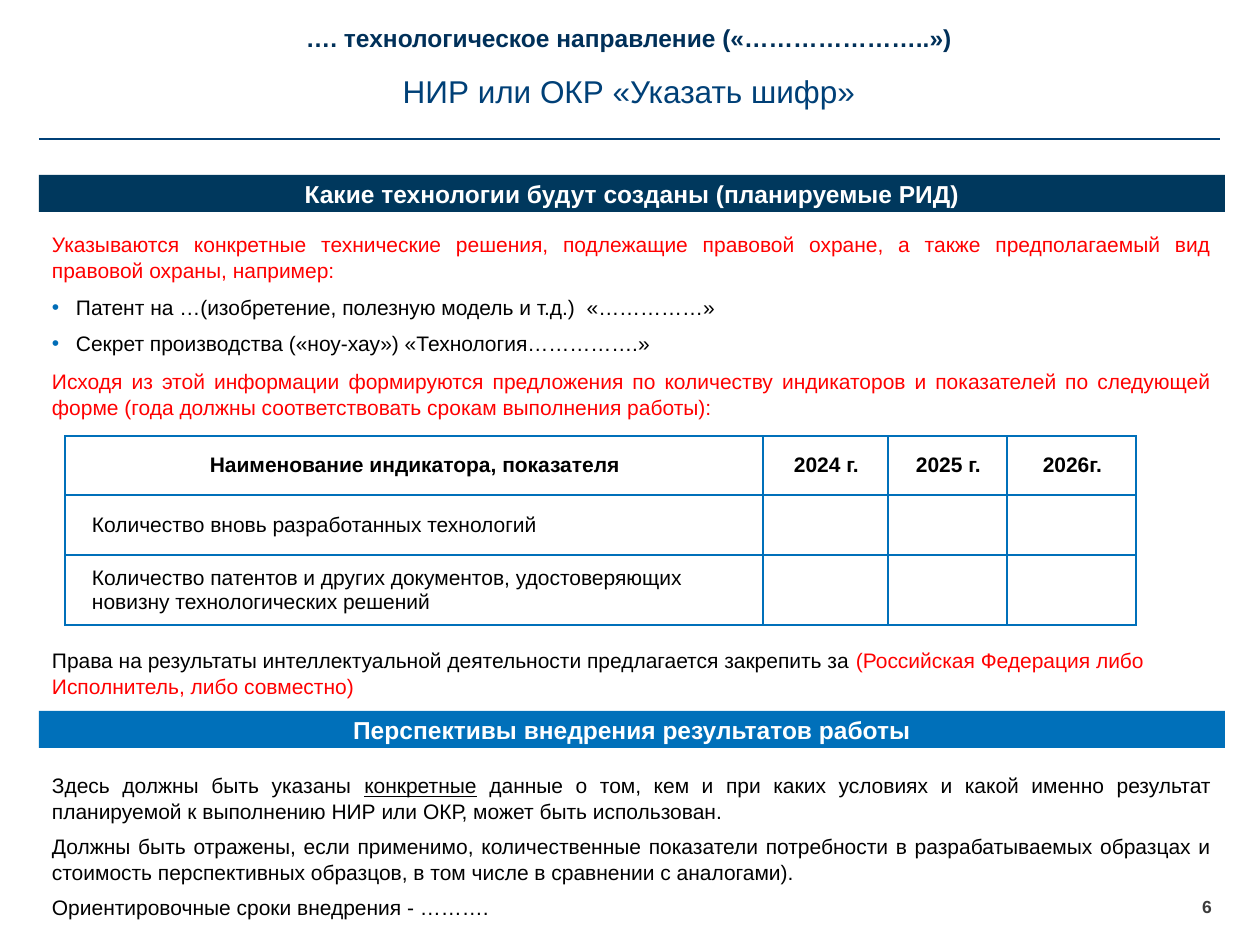
from lxml.etree import SubElement
from pptx import Presentation
from pptx.dml.color import RGBColor
from pptx.enum.shapes import MSO_CONNECTOR as Connector, MSO_SHAPE as Preset
from pptx.enum.text import MSO_ANCHOR as Anchor, PP_ALIGN as Align
from pptx.oxml.ns import qn
from pptx.util import Pt

EMU_PER_PX = 914400 / 126
LEFT, WIDTH = 39, 1186
INSET_X, INSET_Y = 13, 6
NAVY, BLUE, TITLE_BLUE = "00385D", "0070BA", "004077"
BLACK, RED, WHITE = "000000", "FF0000", "FFFFFF"
JUSTIFIED = {"alignment": Align.JUSTIFY}
CENTERED = {"alignment": Align.CENTER}


def px(length):
    return round(length * EMU_PER_PX)


def rgb(value):
    return RGBColor.from_string(value)


def apply(target, values):
    for name, value in values.items():
        setattr(target, name, value)


def add_run(paragraph, text, size=12, color=BLACK, **style):
    run = paragraph.add_run()
    run.text = text
    apply(run.font, {"name": "Arial", "size": Pt(size), **style})
    run.font.color.rgb = rgb(color)


def indent(paragraph, margin, first_line):
    properties = paragraph._p.get_or_add_pPr()
    properties.set("marL", str(px(margin)))
    properties.set("indent", str(px(first_line)))
    return properties


def add_bullet(paragraph, color):
    properties = indent(paragraph, 24, -24)
    bullet_color = SubElement(properties, qn("a:buClr"))
    SubElement(bullet_color, qn("a:srgbClr"), val=color)
    SubElement(properties, qn("a:buFont"), typeface="Arial")
    SubElement(properties, qn("a:buChar"), char="•")


def fill_frame(frame, paragraphs, layout, inset=(INSET_X, INSET_Y), anchor=Anchor.TOP, bullet=None):
    side, edge = map(px, inset)
    apply(frame, {"word_wrap": True, "vertical_anchor": anchor,
                  "margin_left": side, "margin_right": side,
                  "margin_top": edge, "margin_bottom": edge})
    for index, runs in enumerate(paragraphs):
        paragraph = frame.add_paragraph() if index else frame.paragraphs[0]
        if bullet:
            add_bullet(paragraph, bullet)
        apply(paragraph, layout)
        if not index:
            paragraph.space_before = Pt(0)
        for text, style in runs:
            add_run(paragraph, text, **style)


def add_text(slide, box, paragraphs, layout, **frame_options):
    block = slide.shapes.add_textbox(*map(px, box))
    fill_frame(block.text_frame, paragraphs, layout, **frame_options)


def add_banner(slide, top, title, color):
    banner = slide.shapes.add_shape(Preset.RECTANGLE, *map(px, (LEFT, top, WIDTH, 37)))
    banner.shadow.inherit = False
    banner.fill.solid()
    banner.fill.fore_color.rgb = rgb(color)
    banner.line.fill.background()
    heading = (title, {"size": 14, "color": WHITE, "bold": True})
    fill_frame(banner.text_frame, [[heading]], CENTERED, anchor=Anchor.MIDDLE)


def add_rule(slide, left, right, y):
    rule = slide.shapes.add_connector(Connector.STRAIGHT, *map(px, (left, y, right, y)))
    rule.line.color.rgb = rgb(TITLE_BLUE)
    rule.line.width = Pt(1)
    SubElement(rule._element.spPr, qn("a:effectLst"))


def add_borders(cell, color):
    properties = cell._tc.get_or_add_tcPr()
    for side in ("lnL", "lnR", "lnT", "lnB"):
        border = SubElement(properties, qn(f"a:{side}"), w=str(Pt(1)))
        SubElement(SubElement(border, qn("a:solidFill")), qn("a:srgbClr"), val=color)


def add_indicator_table(slide, left, top, widths, heights, rows):
    frame = slide.shapes.add_table(len(rows), len(widths),
                                   *map(px, (left, top, sum(widths), sum(heights))))
    table = frame.table
    apply(table, {"first_row": False, "horz_banding": False})
    for column, width in zip(table.columns, widths):
        column.width = px(width)
    for row_index, (row, height, texts) in enumerate(zip(table.rows, heights, rows)):
        row.height = px(height)
        header = row_index == 0
        for cell, text in zip(row.cells, texts):
            add_borders(cell, BLUE)
            cell.fill.background()
            apply(cell, {"vertical_anchor": Anchor.MIDDLE, "margin_left": px(2),
                         "margin_right": px(2), "margin_top": 0, "margin_bottom": 0})
            if text:
                paragraph = cell.text_frame.paragraphs[0]
                indent(paragraph, 2 if header else 25, 0)
                paragraph.alignment = Align.CENTER if header else Align.LEFT
                add_run(paragraph, text, bold=header)


def main():
    deck = Presentation()
    apply(deck, {"slide_width": px(1260), "slide_height": px(945)})
    slide = deck.slides.add_slide(deck.slide_layouts[6])
    red = {"color": RED}

    add_rule(slide, LEFT, 1220, 139)
    add_text(slide, (LEFT, 15, 1180, 37),
             [[("…. технологическое направление («…………………..»)",
                {"size": 14, "color": "003059", "bold": True})]],
             CENTERED, inset=(0, 0), anchor=Anchor.BOTTOM)
    add_text(slide, (38, 66, 1182, 50),
             [[("НИР или ОКР «Указать шифр»", {"size": 18, "color": TITLE_BLUE})]], CENTERED)

    add_banner(slide, 175, "Какие технологии будут созданы (планируемые РИД)", NAVY)
    add_text(slide, (LEFT, 226, WIDTH, 63),
             [[("Указываются конкретные технические решения, подлежащие правовой охране, "
                "а также предполагаемый вид правовой охраны, например:", red)]],
             JUSTIFIED)
    add_text(slide, (LEFT, 289, WIDTH, 74),
             [[("Патент на …(изобретение, полезную модель и т.д.)  «……………»", {})],
              [("Секрет производства («ноу-хау») «Технология…………….»", {})]],
             {**JUSTIFIED, "space_before": Pt(3), "space_after": Pt(3)}, bullet="016DB7")
    add_text(slide, (LEFT, 363, WIDTH, 63),
             [[("Исходя из этой информации формируются предложения по количеству индикаторов "
                "и показателей по следующей форме (года должны соответствовать срокам "
                "выполнения работы):", red)]],
             JUSTIFIED)
    add_indicator_table(slide, 65, 436, (698, 125, 119, 129), (59, 60, 70), [
        ("Наименование индикатора, показателя", "2024 г.", "2025 г.", "2026г."),
        ("Количество вновь разработанных технологий", "", "", ""),
        ("Количество патентов и других документов, удостоверяющих новизну "
         "технологических решений", "", "", ""),
    ])
    add_text(slide, (LEFT, 642, WIDTH, 63),
             [[("Права на результаты интеллектуальной деятельности предлагается закрепить за ", {}),
               ("(Российская Федерация либо Исполнитель, либо совместно)", red)]],
             {"alignment": Align.LEFT})

    add_banner(slide, 711, "Перспективы внедрения результатов работы", BLUE)
    add_text(slide, (LEFT, 767, WIDTH, 161),
             [[("Здесь должны быть указаны ", {}),
               ("конкретные", {"underline": True}),
               (" данные о том, кем и при каких условиях и какой именно результат планируемой "
                "к выполнению НИР или ОКР, может быть использован.", {})],
              [("Должны быть отражены, если применимо, количественные показатели потребности "
                "в разрабатываемых образцах и стоимость перспективных образцов, в том числе "
                "в сравнении с аналогами).", {})],
              [("Ориентировочные сроки внедрения - ……….", {})]],
             {**JUSTIFIED, "space_after": Pt(6)})
    add_text(slide, (1202, 896, 30, 23),
             [[("6", {"size": 10, "color": "3C3C3C", "bold": True})]],
             {"alignment": Align.LEFT}, inset=(0, 0))

    deck.save("out.pptx")


if __name__ == "__main__":
    main()
